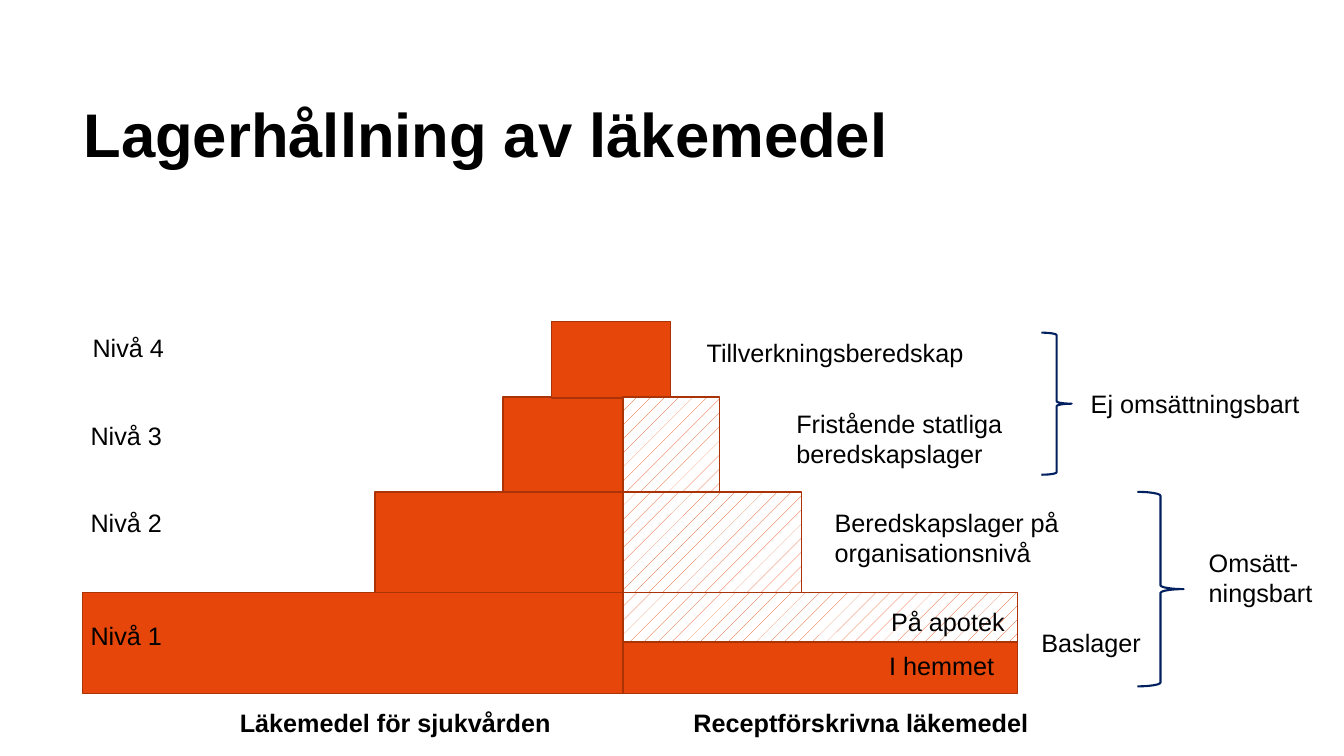
from pptx import Presentation
from pptx.dml.color import RGBColor
from pptx.enum import dml, shapes, text
from pptx.util import Inches, Pt

ORANGE, RUST, NAVY, BLACK, WHITE = "E6460A", "AA3407", "002060", "000000", "FFFFFF"
SOLID_LOOK = dml.MSO_PATTERN.DARK_HORIZONTAL
HATCHED = dml.MSO_PATTERN.PERCENT_5


def color(value):
    return RGBColor.from_string(value)


def add_text(slide, content, left, top, width, height=0.4, size=18, bold=False):
    box = slide.shapes.add_textbox(Inches(left), Inches(top), Inches(width), Inches(height))
    box.text_frame.word_wrap = True
    paragraph = box.text_frame.paragraphs[0]
    paragraph.text = content
    paragraph.font.name = "Arial"
    paragraph.font.size = Pt(size)
    paragraph.font.bold = bold
    paragraph.font.color.rgb = color(BLACK)
    return paragraph


def add_outline(slide, kind, left, top, width, height, line, weight):
    shape = slide.shapes.add_shape(
        kind, Inches(left), Inches(top), Inches(width), Inches(height))
    shape.shadow.inherit = False
    shape.line.color.rgb = color(line)
    shape.line.width = Pt(weight)
    return shape


def add_block(slide, left, top, width, height, pattern=None):
    shape = add_outline(slide, shapes.MSO_SHAPE.RECTANGLE, left, top, width, height, RUST, 1)
    if pattern is None:
        shape.fill.solid()
    else:
        shape.fill.patterned()
        shape.fill.pattern = pattern
        shape.fill.back_color.rgb = color(WHITE)
    shape.fill.fore_color.rgb = color(ORANGE)


def add_title(slide, left, top, width, height):
    paragraph = add_text(slide, "Lagerhållning av läkemedel", left, top, width, height, 44, True)
    paragraph.line_spacing = 0.95


def add_pyramid(slide, left, top):
    middle = left + 5.36
    # Care side, from the base up: offset from left, offset from top, width, height
    for x, y, width, height in [(0, 2.69, 5.45, 1), (2.9, 1.69, 2.46, 1),
                                (4.17, 0.75, 1.21, 0.94), (4.65, 0, 1.18, 0.76)]:
        add_block(slide, left + x, top + y, width, height, SOLID_LOOK)
    # Prescription side, starting at the middle line
    for y, width, height, pattern in [(2.69, 3.91, 0.49, HATCHED), (1.69, 1.77, 1, HATCHED),
                                      (0.75, 0.96, 0.94, HATCHED), (3.18, 3.91, 0.51, None)]:
        add_block(slide, middle, top + y, width, height, pattern)
    # Level names
    for level, (x, y) in enumerate([(-0.02, 2.92), (-0.02, 1.79), (-0.02, 0.93), (0, 0.06)], 1):
        add_text(slide, f"Nivå {level}", left + x, top + y, 1.1)
    # Names of the two sides
    add_text(slide, "Läkemedel för sjukvården", left + 1.46, top + 3.78, 3.44, bold=True)
    add_text(slide, "Receptförskrivna läkemedel", middle + 0.6, top + 3.78, 3.6, bold=True)
    # Stock descriptions
    for content, x, y, width, height in [
        ("Baslager", 4.05, 2.98, 1.52, 0.4),
        ("Beredskapslager på organisationsnivå", 2, 1.79, 2.54, 0.71),
        ("Fristående statliga beredskapslager", 1.62, 0.81, 2.43, 0.71),
        ("Tillverkningsberedskap", 0.73, 0.11, 3.32, 0.4),
        ("På apotek", 2.56, 2.78, 1.35, 0.4),
        ("I hemmet", 2.54, 3.21, 1.37, 0.4),
    ]:
        add_text(slide, content, middle + x, top + y, width, height)


def add_brace(slide, left, top, width, height, label, gap, label_width, label_height):
    brace = add_outline(
        slide, shapes.MSO_SHAPE.RIGHT_BRACE, left, top, width, height, NAVY, 1.5)
    brace.fill.background()
    label_top = top + (height - label_height) / 2
    add_text(slide, label, left + width + gap, label_top, label_width, label_height)


def main():
    presentation = Presentation()
    presentation.slide_width = Inches(13.33)
    presentation.slide_height = Inches(7.5)
    slide = presentation.slides.add_slide(presentation.slide_layouts[6])
    add_title(slide, 0.73, 0.96, 10.51, 1.35)
    add_pyramid(slide, 0.82, 3.19)
    # Turnover groups
    add_brace(slide, 10.33, 3.3, 0.3, 1.41, "Ej omsättningsbart", 0.09, 2.6, 0.4)
    add_brace(slide, 11.28, 4.88, 0.46, 1.93, "Omsätt-ningsbart", 0.15, 1.44, 0.93)
    presentation.save("out.pptx")


if __name__ == "__main__":
    main()
